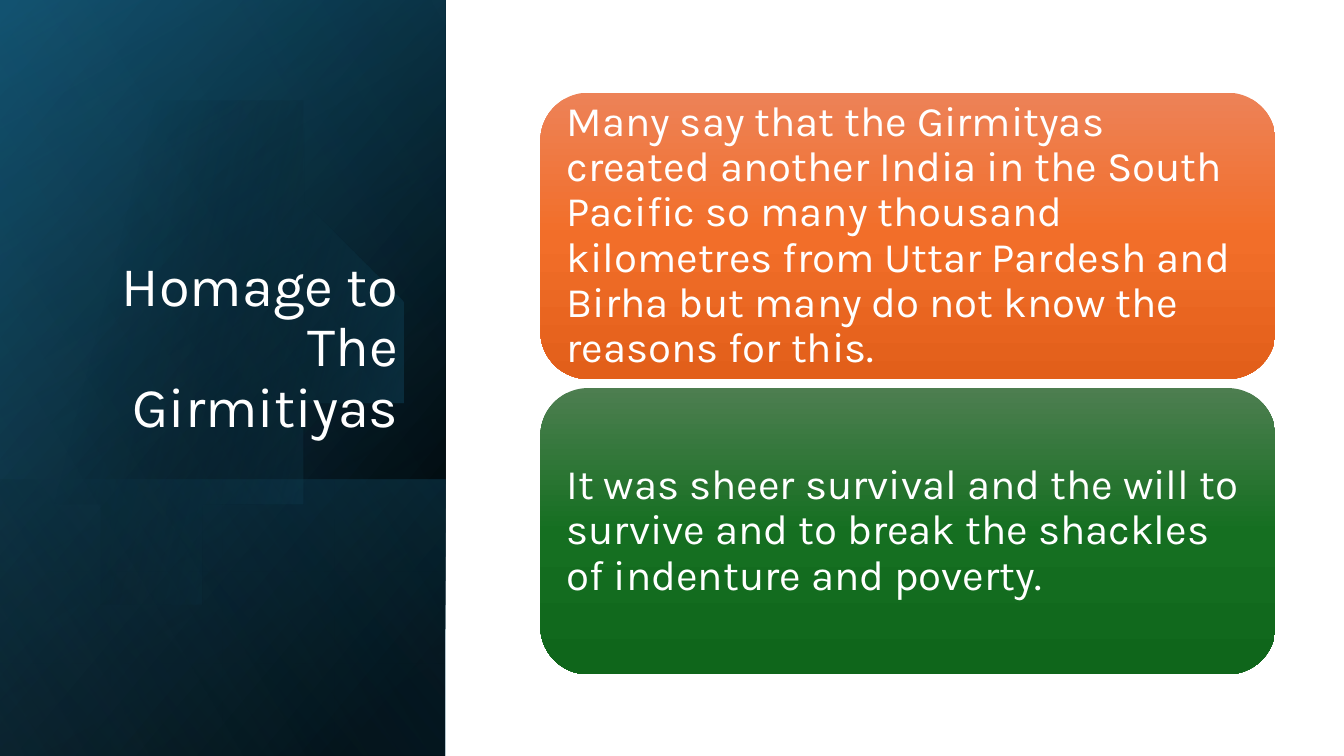
from lxml import etree
from pptx import Presentation, util as u
from pptx.dml.color import RGBColor
from pptx.enum import shapes, text
from pptx.oxml import parse_xml
from pptx.oxml.ns import nsdecls

C = {"black": "000000", "navy": "104862", "teal": "156082", "sky": "46B1E1", "white": "FFFFFF"}
W, H = 13.33, 7.5
PANEL = W * 0.3315


def write(tf, words, size=30, align=text.PP_ALIGN.LEFT, anchor=text.MSO_ANCHOR.MIDDLE, inset=0.12):
    tf.word_wrap = True
    tf.auto_size = text.MSO_AUTO_SIZE.NONE
    tf.vertical_anchor = anchor
    tf.margin_left = tf.margin_right = tf.margin_top = tf.margin_bottom = u.Inches(inset)
    p = tf.paragraphs[0]
    p.alignment = align
    p.line_spacing = 0.9
    r = p.add_run()
    r.text = words
    r.font.name = "Karla"
    r.font.size = u.Pt(size)
    r.font.color.rgb = RGBColor.from_string(C["white"])


def shade(sp, angle, stops):
    gs = "".join(
        f'<a:gs pos="{pos * 1000}"><a:srgbClr val="{color}"><a:alpha val="{alpha * 1000}"/></a:srgbClr></a:gs>'
        for pos, color, alpha in stops)
    sp.shadow.inherit = False
    sp.line.fill.background()
    sp.fill.background()
    empty = sp.element.spPr.find("{*}noFill")
    empty.getparent().replace(empty, parse_xml(
        f'<a:gradFill {nsdecls("a")} rotWithShape="1"><a:gsLst>{gs}</a:gsLst>'
        f'<a:lin ang="{angle * 60000}" scaled="0"/></a:gradFill>'))


prs = Presentation()
prs.slide_width, prs.slide_height = u.Inches(W), u.Inches(H)
s = prs.slides.add_slide(prs.slide_layouts[5])

layers = [
    (H, 50, [(8, C["black"], 100), (100, C["navy"], 100)]),
    (H, 30, [(0, C["black"], 0), (99, C["teal"], 46)]),
    (2.74, 130, [(2, C["teal"], 29), (100, C["black"], 30)]),
    None,
    (H, 120, [(0, C["black"], 0), (99, C["sky"], 11)]),
]
curves = [
    [(1.49, 1.1), (2.46, 1.12), (3.35, 1.77), (3.63, 2.75)],
    [(3.63, 2.75), (3.98, 3.97), (3.28, 5.23), (2.07, 5.58)],
    [(2.07, 5.58), (1.31, 5.8), (0.53, 5.61), (-0.03, 5.14)],
    [(-0.15, 5.03), (-0.15, 3.94), (-0.15, 2.84), (-0.15, 1.75)],
    [(0, 1.61), (0.23, 1.42), (0.5, 1.28), (0.8, 1.19)],
    [(0.8, 1.19), (1.03, 1.13), (1.26, 1.1), (1.49, 1.1)],
]
STEPS = 16

for layer in layers:
    if layer:
        height, angle, stops = layer
        sp = s.shapes.add_shape(
            shapes.MSO_SHAPE.RECTANGLE, u.Inches((PANEL - height) / 2),
            u.Inches(H - (height + PANEL) / 2), u.Inches(height), u.Inches(PANEL))
        sp.rotation = 90
        sp.element.spPr.xfrm.set("flipH", "1")
        shade(sp, angle, stops)
    else:
        outline = []
        for a, b, c, d in curves:
            for i in range(STEPS + 1):
                t = i / STEPS
                outline.append([
                    (1 - t) ** 3 * a[k] + 3 * (1 - t) ** 2 * t * b[k]
                    + 3 * (1 - t) * t ** 2 * c[k] + t ** 3 * d[k] for k in (0, 1)])
        fb = s.shapes.build_freeform(*outline[0], scale=u.Inches(1))
        fb.add_line_segments(outline[1:], close=True)
        shade(fb.convert_to_shape(), 14, [(29, C["black"], 0), (100, C["teal"], 43)])

title = s.shapes.title
title.left, title.top = u.Inches(0.64), u.Inches(1.84)
title.width, title.height = u.Inches(3.41), u.Inches(2.62)
write(title.text_frame, "Homage to The Girmitiyas", size=40, inset=0.1,
      align=text.PP_ALIGN.RIGHT, anchor=text.MSO_ANCHOR.BOTTOM)
s.shapes.element.append(title.element)

cards = [
    ("Many say that the Girmityas created another India in the South Pacific so many thousand "
     "kilometres from Uttar Pardesh and Birha but many do not know the reasons for this.",
     ["ED8257", "F26E29", "E25F1A"]),
    ("It was sheer survival and the will to survive and to break the shackles of indenture and poverty.",
     ["4D7E50", "156F21", "0F661B"]),
]
CARD_H, PITCH = 2.84, 2.93
for row, (words, colors) in enumerate(cards):
    sp = s.shapes.add_shape(
        shapes.MSO_SHAPE.ROUNDED_RECTANGLE, u.Inches(5.36), u.Inches(0.92 + row * PITCH),
        u.Inches(7.29), u.Inches(CARD_H))
    shade(sp, 90, [(50 * i, color, 100) for i, color in enumerate(colors)])
    write(sp.text_frame, words)

prs.save("out.pptx")
